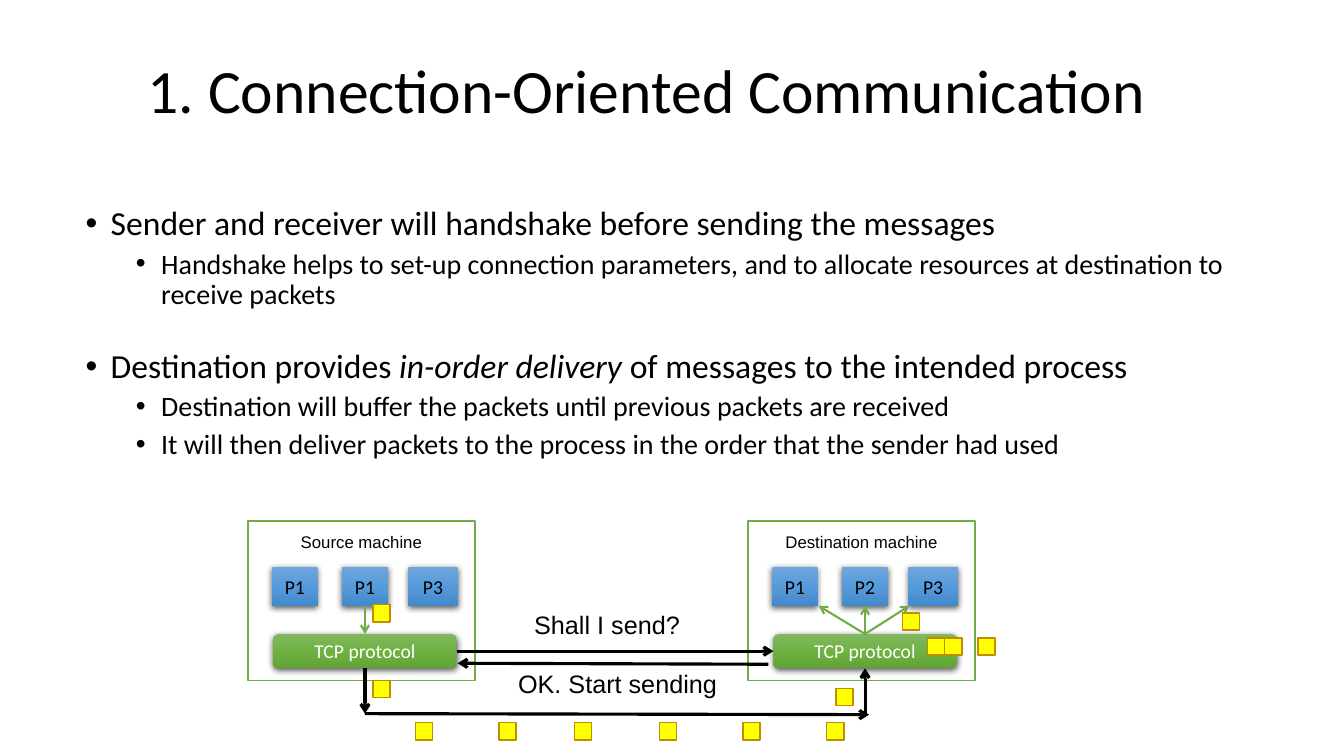
from copy import deepcopy

from lxml.etree import SubElement
from pptx import Presentation
from pptx.dml.color import RGBColor
from pptx.enum.shapes import MSO_CONNECTOR, MSO_SHAPE
from pptx.enum.text import MSO_ANCHOR, PP_ALIGN
from pptx.oxml.ns import qn
from pptx.util import Emu, Pt

PX = 9144  # 100 px to the inch
BLACK, WHITE, GREEN = "000000", "FFFFFF", "70AD47"
BLUE_FADE = ("71A6DB", "559BDB", "448ACA")
GREEN_FADE = ("81B861", "6FB242", "62A336")
TOP, BOTTOM, LEFT, RIGHT = 0, 2, 1, 3


def px(*values):
    return [Emu(v * PX) for v in values]


def rgb(color):
    return RGBColor.from_string(color)


def write(p, text, size=14, font="Calibri", color=BLACK, italic=False,
          align=None, spacing=None, before=None):
    r = p.add_run()
    r.text = text
    r.font.size, r.font.name, r.font.italic = Pt(size), font, italic
    r.font.color.rgb = rgb(color)
    if align is not None:
        p.alignment = align
    if spacing is not None:
        p.line_spacing = spacing
    if before is not None:
        p.space_before = Pt(before)


def add_box(s, x, y, w, h, anchor=MSO_ANCHOR.TOP):
    tf = s.shapes.add_textbox(*px(x, y, w, h)).text_frame
    tf.word_wrap = True
    tf.vertical_anchor = anchor
    return tf


def add_label(s, text, x, y, w, h, **fmt):
    write(add_box(s, x, y, w, h).paragraphs[0], text, font="Arial", **fmt)


def add_bullet(p, margin):
    pPr = p._p.get_or_add_pPr()
    pPr.set("marL", str(margin * PX))
    pPr.set("indent", str(-25 * PX))
    SubElement(pPr, qn("a:buFont"), typeface="Arial")
    SubElement(pPr, qn("a:buChar"), char="•")


def add_rect(s, x, y, w, h, fill, line):
    sp = s.shapes.add_shape(MSO_SHAPE.RECTANGLE, *px(x, y, w, h))
    sp.shadow.inherit = False
    sp.fill.solid()
    sp.fill.fore_color.rgb = rgb(fill)
    sp.line.color.rgb = rgb(line)
    sp.line.width = Pt(1)


def add_block(s, text, x, y, w, h, fade, kind=MSO_SHAPE.RECTANGLE, color=BLACK):
    """Shape with a vertical three-stop gradient, a soft shadow and centred text."""
    sp = s.shapes.add_shape(kind, *px(x, y, w, h))
    sp.line.fill.background()
    sp.fill.gradient()
    sp.fill.gradient_angle = 270
    spPr = sp._element.spPr
    stops = spPr.find(".//" + qn("a:gsLst"))
    stops.insert(1, deepcopy(stops[0]))
    for i, stop in enumerate(sp.fill.gradient_stops):
        stop.position = i / 2
        stop.color.rgb = rgb(fade[i])
    sp.shadow.inherit = False
    shadow = SubElement(spPr.find(qn("a:effectLst")), qn("a:outerShdw"),
                        blurRad="57150", dist="19050", dir="5400000",
                        algn="ctr", rotWithShape="0")
    shade = SubElement(shadow, qn("a:srgbClr"), val=BLACK)
    SubElement(shade, qn("a:alpha"), val="63000")
    tf = sp.text_frame
    tf.word_wrap = False
    tf.vertical_anchor = MSO_ANCHOR.MIDDLE
    write(tf.paragraphs[0], text, color=color, align=PP_ALIGN.CENTER)
    return sp


def add_arrow(s, x1, y1, x2, y2, color=BLACK, width=2.25, begin=None, end=None):
    """begin and end are (shape, side) pairs to join."""
    cx = s.shapes.add_connector(MSO_CONNECTOR.STRAIGHT, *px(x1, y1, x2, y2))
    if begin:
        cx.begin_connect(*begin)
    if end:
        cx.end_connect(*end)
    cx.line.color.rgb = rgb(color)
    cx.line.width = Pt(width)
    SubElement(cx.line._get_or_add_ln(), qn("a:tailEnd"), type="arrow")
    SubElement(cx._element.spPr, qn("a:effectLst"))


def add_machine(s, x, name, processes):
    """Frame, three processes and the protocol bar; returns the middle process and the bar."""
    add_rect(s, x, 517, 225, 158, WHITE, GREEN)
    blocks = [add_block(s, text, x + dx, 562, w, 39, BLUE_FADE)
              for text, dx, w in zip(processes, (24, 93, 159), (45, 46, 49))]
    tcp = add_block(s, "TCP protocol", x + 25, 629, 182, 34, GREEN_FADE,
                    MSO_SHAPE.ROUNDED_RECTANGLE, WHITE)
    add_label(s, name, x, 523, 225, 30, size=12, align=PP_ALIGN.CENTER)
    return blocks[1], tcp


def add_body(s):
    tf = add_box(s, 75, 200, 1183, 512)
    lines = [
        (0, None, ["Sender and receiver will handshake before sending the messages"]),
        (1, 5, ["Handshake helps to set-up connection parameters, and to allocate "
                "resources at destination to receive packets"]),
        (0, 28, ["Destination provides ", "in-order delivery",
                 " of messages to the intended process"]),
        (1, 5, ["Destination will buffer the packets until previous packets are received"]),
        (1, 5, ["It will then deliver packets to the process in the order that "
                "the sender had used"]),
    ]
    for i, (level, before, parts) in enumerate(lines):
        p = tf.add_paragraph() if i else tf.paragraphs[0]
        p.level = level
        for j, part in enumerate(parts):
            write(p, part, size=20 if level else 24, italic=j == 1,
                  spacing=0.9, before=before)
        add_bullet(p, 75 if level else 25)


def main():
    prs = Presentation()
    prs.slide_width, prs.slide_height = px(1333, 750)
    s = prs.slides.add_slide(prs.slide_layouts[6])

    # Title and bullets
    title = add_box(s, 108, 35, 1067, 115, MSO_ANCHOR.MIDDLE)
    write(title.paragraphs[0], "1. Connection-Oriented Communication", size=44,
          align=PP_ALIGN.CENTER, spacing=0.9)
    add_body(s)

    # Machines and the arrows inside them
    dest_process, dest_tcp = add_machine(s, 742, "Destination machine", ("P1", "P2", "P3"))
    for x, end in ((812, None), (858, (dest_process, BOTTOM)), (902, None)):
        add_arrow(s, 858, 629, x, 601, GREEN, 1.5, (dest_tcp, TOP), end)
    src_process, src_tcp = add_machine(s, 246, "Source machine", ("P1", "P1", "P3"))
    add_arrow(s, 362, 601, 362, 629, GREEN, 1.5, (src_process, BOTTOM), (src_tcp, TOP))

    # Handshake and data path
    add_arrow(s, 858, 708, 858, 663, end=(dest_tcp, BOTTOM))
    add_arrow(s, 362, 663, 362, 708, begin=(src_tcp, BOTTOM))
    add_arrow(s, 453, 646, 767, 646, begin=(src_tcp, RIGHT), end=(dest_tcp, LEFT))
    add_label(s, "Shall I send?", 520, 600, 183, 40, size=18)
    add_arrow(s, 762, 659, 454, 658)
    add_label(s, "OK. Start sending", 504, 658, 225, 40, size=18)
    add_arrow(s, 362, 708, 862, 709)

    # Packets
    in_transit = [(x, 717) for x in (412, 495, 570, 654, 737, 820)]
    buffered = [(x, 633) for x in (920, 937, 970)]
    for x, y in [(370, 600), (370, 675), *in_transit, (829, 683), *buffered, (895, 608)]:
        add_rect(s, x, y, 17, 17, "FFFF00", "BD8E00")

    prs.save("out.pptx")


if __name__ == "__main__":
    main()
